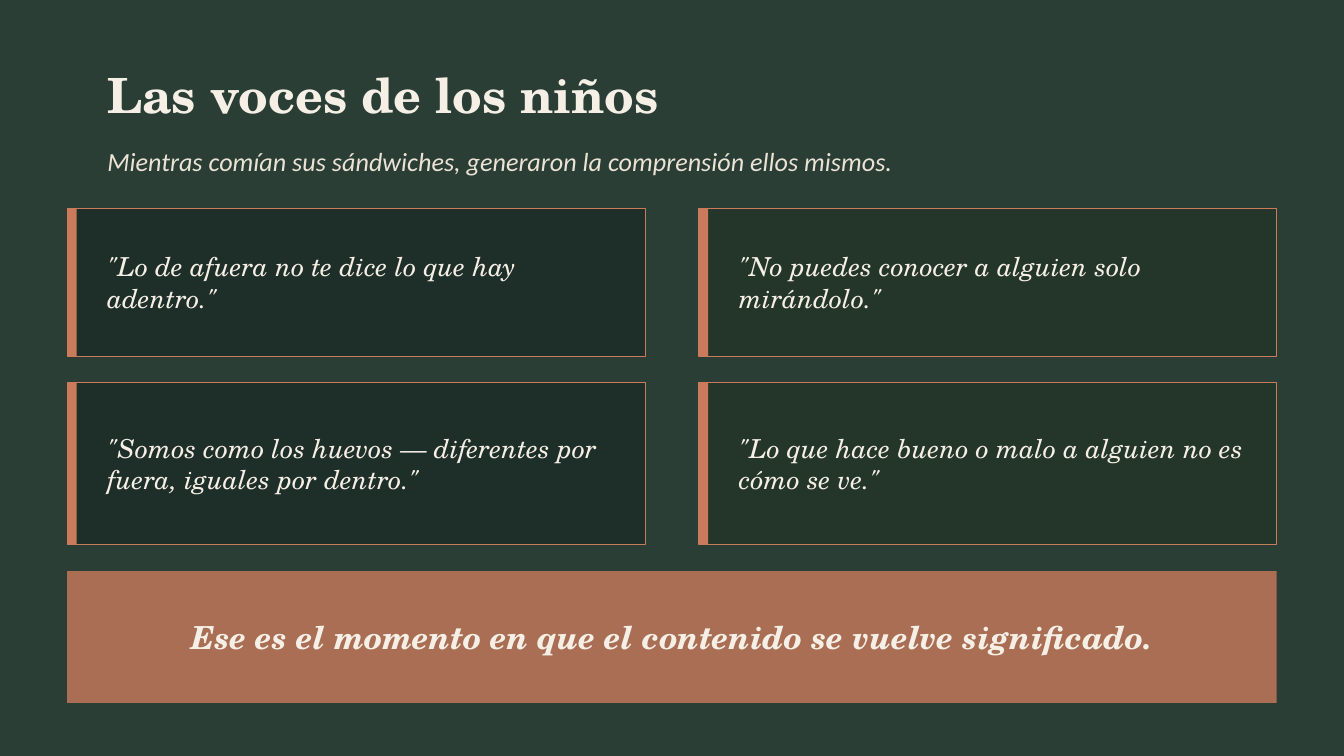
from dataclasses import dataclass
from typing import NamedTuple, Optional

from lxml.etree import SubElement
from pptx import Presentation
from pptx.dml.color import RGBColor
from pptx.enum.shapes import MSO_SHAPE
from pptx.enum.text import MSO_ANCHOR, PP_ALIGN
from pptx.oxml.ns import qn
from pptx.slide import Slide
from pptx.util import Inches, Pt


@dataclass(frozen=True)
class Theme:
    background: str = "2A3E35"
    cream: str = "F5EFE6"
    sand: str = "EBE3D5"
    clay: str = "C97B5C"
    card_fills: tuple[str, str] = ("1E2E28", "243529")  # one per column
    serif: str = "TeX Gyre Schola"
    sans: str = "Calibri"
    title_size: int = 26
    body_size: int = 14
    closing_size: int = 17
    border: float = 0.5


class Area(NamedTuple):
    left: float
    top: float
    width: float
    height: float

    def inset(self, left: float, right: float, vertical: float = 0) -> "Area":
        return Area(self.left + left, self.top + vertical,
                    self.width - left - right, self.height - 2 * vertical)


class Type(NamedTuple):
    font: str
    size: int
    color: str
    bold: bool = False
    italic: bool = False


class Quote(NamedTuple):
    column: int
    row: int
    words: str


class Row(NamedTuple):
    top: float
    height: float


THEME = Theme()
WIDTH = 10
HEIGHT = WIDTH * 9 / 16

# Grid: two equal columns between the margins, three rows
MARGIN, GUTTER, INDENT = 0.5, 0.4, 0.2
FULL_WIDTH = WIDTH - 2 * MARGIN
COLUMN_WIDTH = (FULL_WIDTH - GUTTER) / 2
QUOTE_ROWS = (Row(1.55, 1.1), Row(2.85, 1.2))
CLOSING_ROW = Row(4.25, 0.98)
ACCENT_WIDTH = 0.07

TITLE = Type(THEME.serif, THEME.title_size, THEME.cream, bold=True)
SUBTITLE = Type(THEME.sans, THEME.body_size, THEME.sand, italic=True)
QUOTE = Type(THEME.serif, THEME.body_size, THEME.cream, italic=True)
CLOSING = Type(THEME.serif, THEME.closing_size, THEME.cream, bold=True, italic=True)

QUOTES = (
    Quote(0, 0, '"Lo de afuera no te dice lo que hay adentro."'),
    Quote(1, 0, '"No puedes conocer a alguien solo mirándolo."'),
    Quote(0, 1, '"Somos como los huevos — diferentes por fuera, iguales por dentro."'),
    Quote(1, 1, '"Lo que hace bueno o malo a alguien no es cómo se ve."'),
)


def draw_block(slide: Slide, area: Area, fill: str, line: Optional[str] = None,
               opacity: int = 100) -> None:
    block = slide.shapes.add_shape(MSO_SHAPE.RECTANGLE, *map(Inches, area))
    block.shadow.inherit = False
    block.fill.solid()
    block.fill.fore_color.rgb = RGBColor.from_string(fill)
    if opacity < 100:
        color = block.fill._xPr.find(qn("a:solidFill"))[0]
        SubElement(color, qn("a:alpha"), val=str(opacity * 1000))
    if line:
        block.line.color.rgb = RGBColor.from_string(line)
        block.line.width = Pt(THEME.border)
    else:
        block.line.fill.background()


def draw_text(slide: Slide, area: Area, words: str, style: Type,
              align: PP_ALIGN = PP_ALIGN.LEFT) -> None:
    frame = slide.shapes.add_textbox(*map(Inches, area)).text_frame
    frame.word_wrap = True
    frame.vertical_anchor = MSO_ANCHOR.MIDDLE
    paragraph = frame.paragraphs[0]
    paragraph.alignment = align
    run = paragraph.add_run()
    run.text = words
    run.font.name = style.font
    run.font.size = Pt(style.size)
    run.font.bold = style.bold
    run.font.italic = style.italic
    run.font.color.rgb = RGBColor.from_string(style.color)


def draw_quote(slide: Slide, quote: Quote) -> None:
    row = QUOTE_ROWS[quote.row]
    left = MARGIN + quote.column * (COLUMN_WIDTH + GUTTER)
    card = Area(left, row.top, COLUMN_WIDTH, row.height)
    draw_block(slide, card, THEME.card_fills[quote.column], THEME.clay)
    draw_block(slide, card._replace(width=ACCENT_WIDTH), THEME.clay)
    draw_text(slide, card.inset(INDENT, 0.1, 0.08), quote.words, QUOTE)


def main() -> None:
    presentation = Presentation()
    presentation.slide_width = Inches(WIDTH)
    presentation.slide_height = Inches(HEIGHT)
    slide = presentation.slides.add_slide(presentation.slide_layouts[6])
    slide.background.fill.solid()
    slide.background.fill.fore_color.rgb = RGBColor.from_string(THEME.background)

    # Heading
    heading = Area(MARGIN, 0.4, FULL_WIDTH, 0.6).inset(INDENT, INDENT)
    draw_text(slide, heading, "Las voces de los niños", TITLE)
    draw_text(slide, heading._replace(top=1, height=0.4),
              "Mientras comían sus sándwiches, generaron la comprensión ellos mismos.",
              SUBTITLE)

    # Quote cards
    for quote in QUOTES:
        draw_quote(slide, quote)

    # Closing banner
    banner = Area(MARGIN, CLOSING_ROW.top, FULL_WIDTH, CLOSING_ROW.height)
    draw_block(slide, banner, THEME.clay, opacity=80)
    draw_text(slide, banner.inset(INDENT, INDENT),
              "Ese es el momento en que el contenido se vuelve significado.",
              CLOSING, PP_ALIGN.CENTER)

    presentation.save("out.pptx")


if __name__ == "__main__":
    main()
